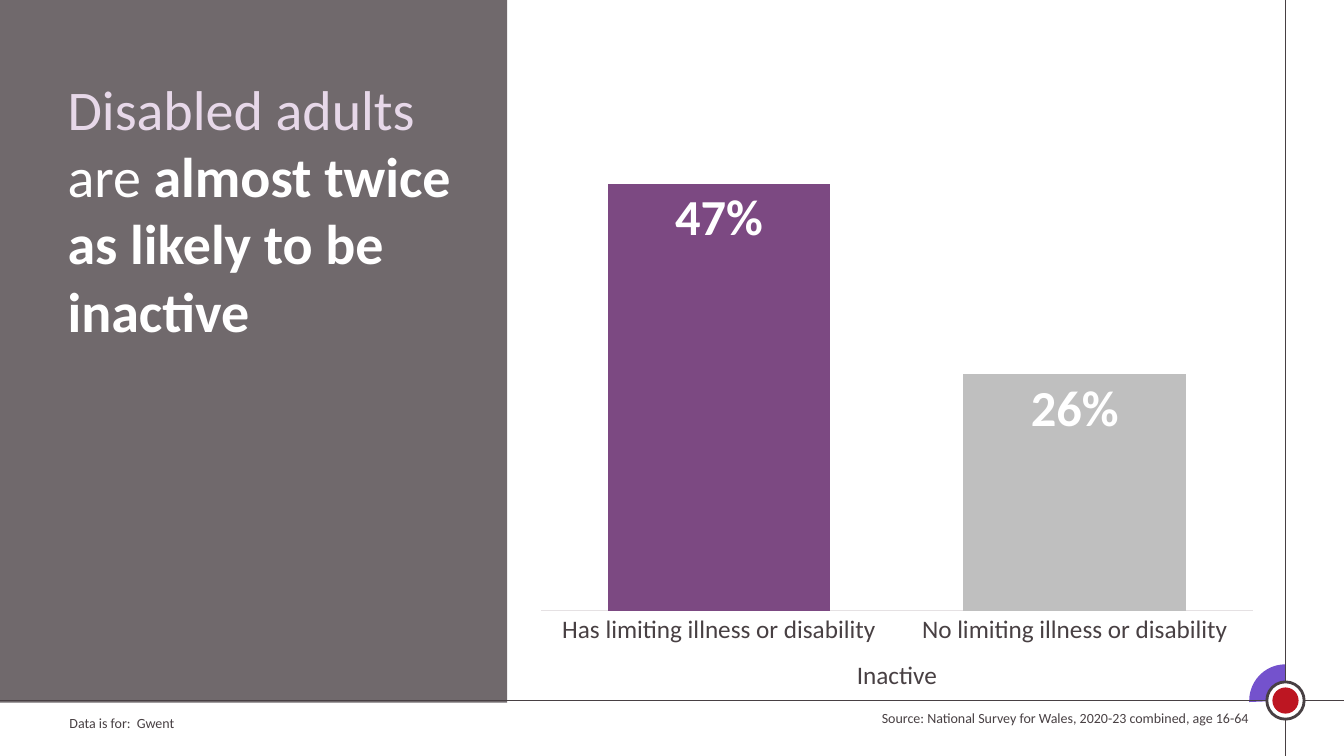
from dataclasses import dataclass
from lxml.etree import SubElement
from pptx import Presentation
from pptx.chart.data import CategoryChartData as Data
from pptx.dml.color import RGBColor as Rgb
from pptx.enum.chart import XL_CHART_TYPE as Kind, XL_LABEL_POSITION as Pos
from pptx.enum.chart import XL_TICK_LABEL_POSITION as Lab, XL_TICK_MARK as Tick
from pptx.enum.shapes import MSO_CONNECTOR as Line, MSO_SHAPE as Form
from pptx.enum.text import MSO_ANCHOR as Anchor, MSO_AUTO_SIZE as Fit, PP_ALIGN as Align
from pptx.oxml.ns import qn
from pptx.util import Inches, Pt


@dataclass(frozen=True)
class Theme:
    font: str = "Calibri"
    ink: str = "484043"
    white: str = "FFFFFF"
    pale: str = "E7D8E9"
    plum: str = "7C4982"
    grey: str = "BFBFBF"
    rule: str = "E5E1E3"
    violet: str = "7452CD"
    red: str = "BD1622"
    head: int = 40
    mark: int = 36
    axis: int = 18
    note: int = 10


T = Theme()
WIDE, HIGH = 13.33, 7.5
EDGE, BASE = 12.75, 6.95  # where the two frame lines cross


def tint(font, size, color, bold=False):
    font.name, font.size, font.bold = T.font, Pt(size), bold
    font.color.rgb = Rgb.from_string(color)


def write(frame, runs, align=Align.LEFT):
    frame.word_wrap = True
    frame.vertical_anchor = Anchor.TOP
    para = frame.paragraphs[0]
    para.alignment = align
    for text, size, color, bold in runs:
        run = para.add_run()
        run.text = text
        tint(run.font, size, color, bold)


def label(slide, box, text, size, align=Align.LEFT):
    area = slide.shapes.add_textbox(*map(Inches, box))
    write(area.text_frame, [(text, size, T.ink, False)], align)


def solid(slide, form, box, color, edge=0):
    shape = slide.shapes.add_shape(form, *map(Inches, box))
    shape.shadow.inherit = False
    shape.fill.solid()
    shape.fill.fore_color.rgb = Rgb.from_string(color)
    if edge:
        shape.line.color.rgb = Rgb.from_string(T.ink)
        shape.line.width = Pt(edge)
    else:
        shape.line.fill.background()
    return shape


def disc(slide, form, size, color, edge=0):
    """Round shape centred on the crossing of the frame lines."""
    box = EDGE - size / 2, BASE - size / 2, size, size
    return solid(slide, form, box, color, edge)


def frame(slide):
    # Violet quarter, frame lines and button
    wedge = disc(slide, Form.PIE, 0.72, T.violet)
    wedge.adjustments[0], wedge.adjustments[1] = 106.62, 162
    for ends in ((EDGE, 0, EDGE, HIGH), (0, BASE, WIDE, BASE)):
        line = slide.shapes.add_connector(Line.STRAIGHT, *map(Inches, ends))
        line.line.color.rgb = Rgb.from_string(T.ink)
        line.line.width = Pt(1)
        SubElement(line._element.spPr, qn("a:effectLst"))
    disc(slide, Form.OVAL, 0.37, T.white, 2)
    disc(slide, Form.OVAL, 0.26, T.red)


def panel(slide, box):
    # Translucent panel with the headline
    back = solid(slide, Form.RECTANGLE, box, T.ink)
    color = back._element.spPr.find(".//" + qn("a:srgbClr"))
    SubElement(color, qn("a:alpha"), val="78000")
    left, top, wide, high = box
    title = slide.shapes.title
    title.left, title.top = Inches(left + 0.58), Inches(top + 0.69)
    title.width, title.height = Inches(wide - 0.87), Inches(high - 3.2)
    write(title.text_frame, [
        ("Disabled adults ", T.head, T.pale, False),
        ("are ", T.head, T.white, False),
        ("almost twice as likely to be inactive", T.head, T.white, True),
    ])
    title.text_frame.auto_size = Fit.NONE
    slide.shapes._spTree.append(title._element)  # headline above the panel


def bars(slide, box):
    # Column chart and its caption
    data = Data(number_format="0%")
    data.categories = ["Has limiting illness or disability",
                       "No limiting illness or disability"]
    data.add_series("Series 1", (0.47, 0.26))
    chart = slide.shapes.add_chart(
        Kind.COLUMN_CLUSTERED, *map(Inches, box), data).chart
    chart.has_legend = chart.has_title = False
    tint(chart.font, 16, T.ink)

    axis = chart.category_axis
    axis.major_tick_mark = axis.minor_tick_mark = Tick.NONE
    tint(axis.tick_labels.font, T.axis, T.ink)
    axis.format.line.color.rgb = Rgb.from_string(T.rule)
    axis.format.line.width = Pt(0.75)
    scale = chart.value_axis
    scale.minimum_scale, scale.maximum_scale = 0, 0.5
    scale.has_major_gridlines = False
    scale.tick_label_position = Lab.NONE
    scale.visible = False

    plot = chart.plots[0]
    plot.gap_width, plot.vary_by_categories = 60, False
    row = plot.series[0]
    for part, color in ((row, T.plum), (row.points[1], T.grey)):
        part.format.fill.solid()
        part.format.fill.fore_color.rgb = Rgb.from_string(color)
    marks = row.data_labels
    marks.show_value, marks.position = True, Pos.INSIDE_END
    marks.number_format, marks.number_format_is_linked = "0%", False
    tint(marks.font, T.mark, T.white, True)

    left, top, wide, high = box
    label(slide, (left + 3.18, top + high - 0.01, 1.22, 0.4), "Inactive", T.axis)


def notes(slide, top):
    # Footer: area on the left, source on the right
    label(slide, (0.59, top + 0.05, 4.39, 0.27), "Data is for:  Gwent", T.note)
    label(slide, (8.32, top, 4.16, 0.27),
          "Source: National Survey for Wales, 2020-23 combined, age 16-64",
          T.note, Align.RIGHT)


def main():
    deck = Presentation()
    deck.slide_width, deck.slide_height = Inches(WIDE), Inches(HIGH)
    slide = deck.slides.add_slide(deck.slide_layouts[5])
    frame(slide)
    panel(slide, (-0.01, 0, 5.04, 6.97))
    bars(slide, (5.22, 1.45, 7.35, 5.05))
    notes(slide, 6.99)
    deck.save("out.pptx")


if __name__ == "__main__":
    main()
